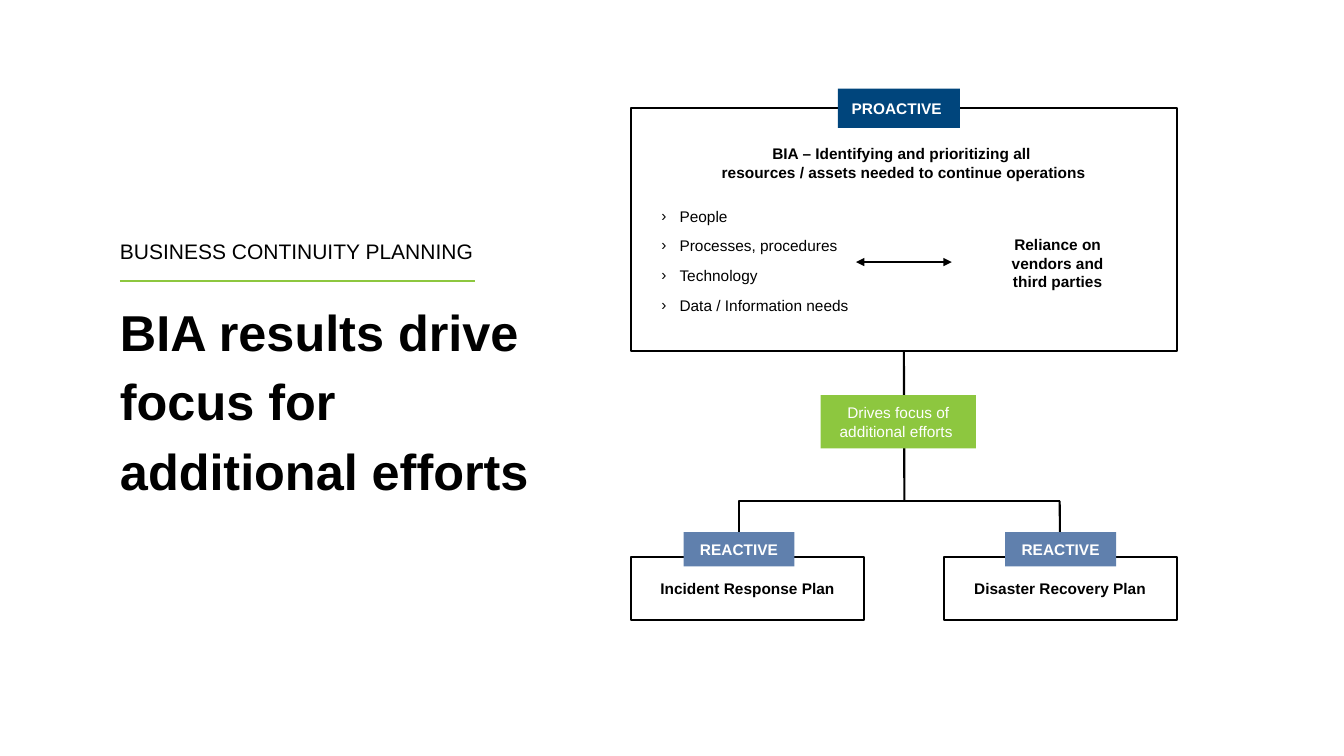
"""Build the business continuity planning slide: BIA results drive focus."""
from lxml import etree
from pptx import Presentation
from pptx.dml.color import RGBColor
from pptx.enum import shapes, text
from pptx.oxml.ns import qn
from pptx.util import Inches, Pt

BLACK = RGBColor(0x00, 0x00, 0x00)
WHITE = RGBColor(0xFF, 0xFF, 0xFF)
NAVY = RGBColor(0x00, 0x45, 0x7C)
STEEL = RGBColor(0x60, 0x80, 0xAD)
GREEN = RGBColor(0x8D, 0xC7, 0x3F)

prs = Presentation()
prs.slide_width, prs.slide_height = Inches(13.33), Inches(7.5)
slide = prs.slides.add_slide(prs.slide_layouts[1])
title, body = slide.placeholders


def add_run(p, words, size=11, bold=True, color=BLACK):
    r = p.add_run()
    r.text = words
    r.font.name, r.font.size, r.font.bold = "Arial", Pt(size), bold
    r.font.color.rgb = color


def add_line(x1, y1, x2, y2, color=BLACK, kind=shapes.MSO_CONNECTOR.STRAIGHT):
    line = slide.shapes.add_connector(kind, Inches(x1), Inches(y1), Inches(x2), Inches(y2))
    line.line.color.rgb = color
    line.line.width = Pt(1.5)
    etree.SubElement(line._element.spPr, qn("a:effectLst"))
    return line


for sp, box, margin, anchor in [
    (title, (1.19, 2.33, 4.06, 2.41), 0, text.MSO_ANCHOR.TOP),
    (body, (6.26, 1.07, 5.41, 2.41), 0.3, text.MSO_ANCHOR.MIDDLE),
]:
    sp.left, sp.top, sp.width, sp.height = map(Inches, box)
    tf = sp.text_frame
    tf.margin_left = tf.margin_right = tf.margin_top = tf.margin_bottom = Inches(margin)
    tf.vertical_anchor = anchor
    tf.word_wrap = True
    tf.auto_size = text.MSO_AUTO_SIZE.NONE

tf = title.text_frame
for p, words, size, bold, after in [
    (tf.paragraphs[0], "BUSINESS CONTINUITY PLANNING", 15, False, 20),
    (tf.add_paragraph(), "BIA results drive focus for additional efforts", 36, True, 0),
]:
    p.alignment = text.PP_ALIGN.LEFT
    p.line_spacing = 1.15
    p.space_before, p.space_after = Pt(0), Pt(after)
    add_run(p, words, size, bold)

body.line.color.rgb = BLACK
body.line.width = Pt(1.5)
tf = body.text_frame
p = tf.paragraphs[0]
p.alignment = text.PP_ALIGN.CENTER
p.space_before, p.space_after = Pt(0), Pt(6)
pPr = p._p.get_or_add_pPr()
pPr.set("marL", "0")
pPr.set("indent", "0")
etree.SubElement(pPr, qn("a:buNone"))
add_run(p, "BIA – Identifying and prioritizing all ")
p.add_line_break()
add_run(p, "resources / assets needed to continue operations")

resources = ["People", "Processes, procedures", "Technology", "Data / Information needs"]
for i, resource in enumerate(resources):
    p = tf.add_paragraph()
    p.level = 1
    p.alignment = text.PP_ALIGN.LEFT
    p.line_spacing = 1.15 if i else 1.0
    p.space_before, p.space_after = Pt(0 if i else 12), Pt(6)
    pPr = p._p.get_or_add_pPr()
    pPr.set("marL", str(Inches(0.18)))
    pPr.set("indent", str(Inches(-0.18)))
    etree.SubElement(pPr, qn("a:buFont"), typeface="Arial")
    etree.SubElement(pPr, qn("a:buChar"), char="›")
    add_run(p, resource, bold=False)

trunk = add_line(8.97, 3.48, 8.97, 4.97)
trunk.begin_connect(body, 2)
right_branch = add_line(10.51, 4.97, 10.51, 5.53)
left_branch = add_line(7.33, 5.39, 10.51, 4.97, kind=shapes.MSO_CONNECTOR.ELBOW)
avLst = left_branch._element.spPr.find(qn("a:prstGeom")).get_or_add_avLst()
etree.SubElement(avLst, qn("a:gd"), name="adj1", fmla="val 1")

vendor_arrow = add_line(8.49, 2.6, 9.44, 2.6)
ln = vendor_arrow.line._get_or_add_ln()
for end in ("a:headEnd", "a:tailEnd"):
    etree.SubElement(ln, qn(end), type="triangle")
add_line(1.19, 2.79, 4.71, 2.79, GREEN)

boxes = {}
for words, x, y, w, h, fill, border, margin, bold, color in [
    ("Reliance on vendors and third parties", 9.72, 2.26, 1.54, 0.7, None, False, 0.3, True, BLACK),
    ("Incident Response Plan", 6.26, 5.53, 2.31, 0.62, WHITE, True, 0, True, BLACK),
    ("REACTIVE", 6.78, 5.28, 1.1, 0.34, STEEL, False, 0.1, True, WHITE),
    ("Disaster Recovery Plan", 9.36, 5.53, 2.31, 0.62, WHITE, True, 0, True, BLACK),
    ("REACTIVE", 9.97, 5.28, 1.1, 0.34, STEEL, False, 0.1, True, WHITE),
    ("PROACTIVE ", 8.31, 0.88, 1.21, 0.39, NAVY, False, 0.1, True, WHITE),
    ("Drives focus of additional efforts ", 8.14, 3.92, 1.54, 0.53, GREEN, False, 0.1, False, WHITE),
]:
    frame = [Inches(v) for v in (x, y, w, h)]
    if fill is None:
        sp = slide.shapes.add_textbox(*frame)
    else:
        sp = slide.shapes.add_shape(shapes.MSO_SHAPE.RECTANGLE, *frame)
        sp.shadow.inherit = False
        sp.fill.solid()
        sp.fill.fore_color.rgb = fill
        if border:
            sp.line.color.rgb = BLACK
            sp.line.width = Pt(1.5)
        else:
            sp.line.fill.background()
    tf = sp.text_frame
    tf.word_wrap = True
    tf.vertical_anchor = text.MSO_ANCHOR.MIDDLE
    tf.margin_left = tf.margin_right = Inches(margin)
    tf.margin_top = tf.margin_bottom = Inches(0 if margin == 0 else 0.05)
    p = tf.paragraphs[0]
    p.alignment = text.PP_ALIGN.CENTER
    add_run(p, words, bold=bold, color=color)
    boxes[words] = sp
right_branch.end_connect(boxes["Disaster Recovery Plan"], 0)

prs.save("out.pptx")
